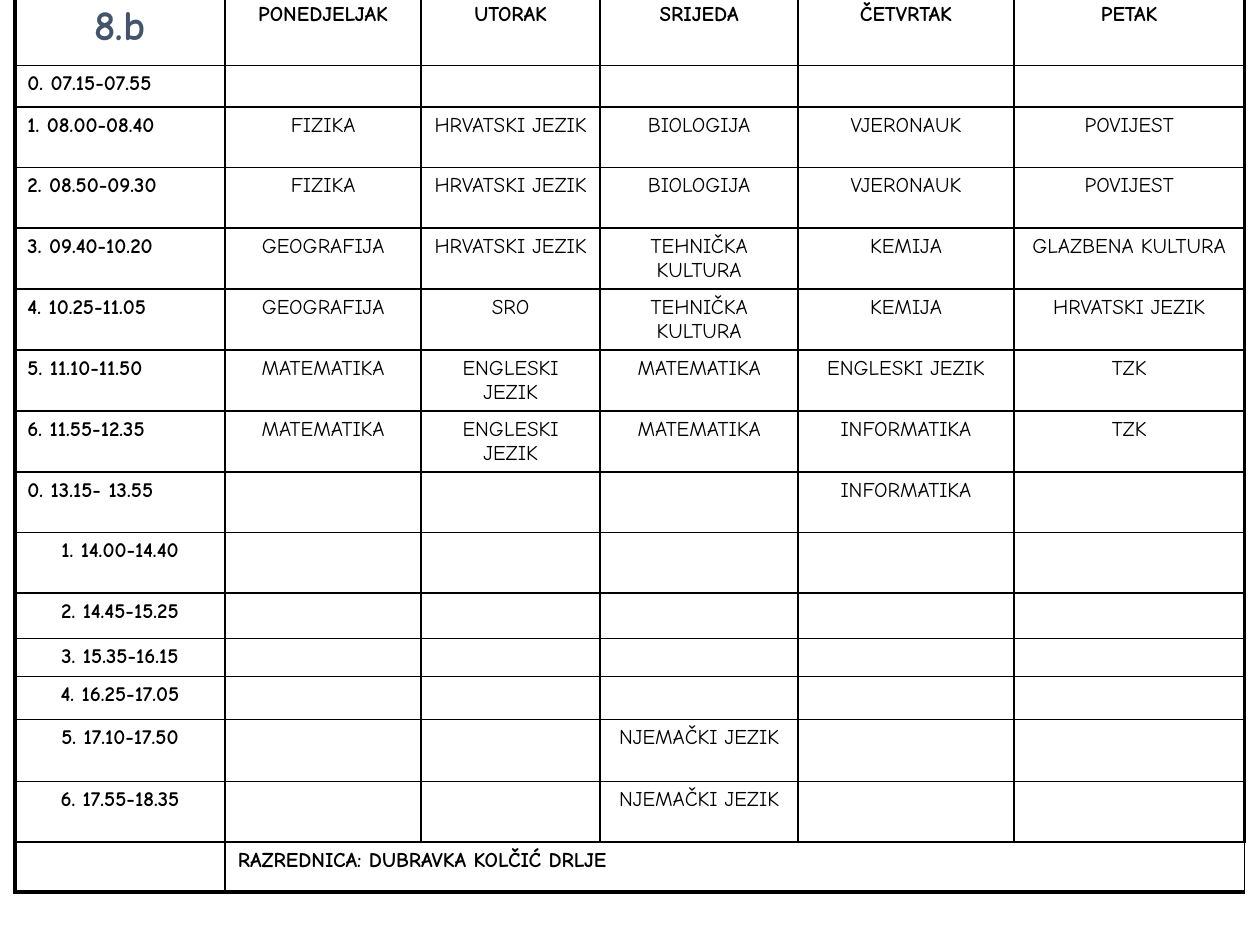
from dataclasses import dataclass

from lxml import etree
from pptx import Presentation
from pptx import util as u
from pptx.dml.color import RGBColor
from pptx.enum import text
from pptx.oxml.ns import qn
from pptx.table import Table, _Cell


@dataclass(frozen=True)
class Theme:
    font: str = "Comic Neue"
    ink: str = "000000"
    accent: str = "44546A"
    body: float = 12
    heading: float = 24
    inner_line: float = 1
    outer_line: float = 2.25


@dataclass(frozen=True)
class Lesson:
    time: str
    height: float  # cm
    subjects: tuple[str, ...] = ("",) * 5
    centred: bool = False


THEME = Theme()
CLASS_NAME = "8.b"
DAYS = ("PONEDJELJAK", "UTORAK", "SRIJEDA", "ČETVRTAK", "PETAK")
TEACHER = "RAZREDNICA: DUBRAVKA KOLČIĆ DRLJE"
COLUMNS = (4.24, 3.95, 3.61, 3.99, 4.35, 4.65)  # cm
HEADER_HEIGHT, FOOTER_HEIGHT = 1.4, 1.01
GERMAN = ("", "", "NJEMAČKI JEZIK", "", "")

LESSONS = (
    Lesson("0. 07.15-07.55", 0.84),
    Lesson("1. 08.00-08.40", 1.22,
           ("FIZIKA", "HRVATSKI JEZIK", "BIOLOGIJA", "VJERONAUK", "POVIJEST")),
    Lesson("2. 08.50-09.30", 1.22,
           ("FIZIKA", "HRVATSKI JEZIK", "BIOLOGIJA", "VJERONAUK", "POVIJEST")),
    Lesson("3. 09.40-10.20", 1.23,
           ("GEOGRAFIJA", "HRVATSKI JEZIK", "TEHNIČKA KULTURA", "KEMIJA", "GLAZBENA KULTURA")),
    Lesson("4. 10.25-11.05", 1.23,
           ("GEOGRAFIJA", "SRO", "TEHNIČKA KULTURA", "KEMIJA", "HRVATSKI JEZIK")),
    Lesson("5. 11.10-11.50", 1.23,
           ("MATEMATIKA", "ENGLESKI JEZIK", "MATEMATIKA", "ENGLESKI JEZIK", "TZK")),
    Lesson("6. 11.55-12.35", 1.23,
           ("MATEMATIKA", "ENGLESKI JEZIK", "MATEMATIKA", "INFORMATIKA", "TZK")),
    Lesson("0. 13.15- 13.55", 1.22, ("", "", "", "INFORMATIKA", "")),
    Lesson("1. 14.00-14.40", 1.22, centred=True),
    Lesson("2. 14.45-15.25", 0.91, centred=True),
    Lesson("3. 15.35-16.15", 0.75, centred=True),
    Lesson("4. 16.25-17.05", 0.86, centred=True),
    Lesson("5. 17.10-17.50", 1.25, GERMAN, centred=True),
    Lesson("6. 17.55-18.35", 1.22, GERMAN, centred=True),
)


def write(cell: _Cell, words: str, bold: bool = False, centred: bool = True,
          size: float = THEME.body, colour: str = THEME.ink) -> None:
    p = cell.text_frame.paragraphs[0]
    p.alignment = text.PP_ALIGN.CENTER if centred else text.PP_ALIGN.LEFT
    if not words:
        # An empty cell takes its line height from the end-of-paragraph mark.
        etree.SubElement(p._p, qn("a:endParaRPr"), sz=str(int(size * 100)))
        return
    r = p.add_run()
    r.text = words
    r.font.name = THEME.font
    r.font.size = u.Pt(size)
    r.font.bold = bold
    r.font.color.rgb = RGBColor.from_string(colour)


def draw_borders(cell: _Cell, outer: dict[str, bool]) -> None:
    """Rule all four sides, heavier on those at the edge of the table."""
    props = cell._tc.get_or_add_tcPr()
    for side in ("L", "R", "T", "B"):
        width = THEME.outer_line if outer[side] else THEME.inner_line
        line = etree.SubElement(props, qn(f"a:ln{side}"), w=str(u.Pt(width)))
        fill = etree.SubElement(line, qn("a:solidFill"))
        etree.SubElement(fill, qn("a:srgbClr"), val=THEME.ink)


def style_grid(table: Table) -> None:
    table.first_row = table.horz_banding = False
    last_row, last_col = len(table.rows) - 1, len(table.columns) - 1
    for i in range(last_row + 1):
        for j in range(last_col + 1):
            cell = table.cell(i, j)
            draw_borders(cell, {"L": j == 0, "R": j == last_col,
                                "T": i == 0, "B": i == last_row})
            cell.fill.background()


def fill_timetable(table: Table) -> None:
    write(table.cell(0, 0), CLASS_NAME, True, size=THEME.heading, colour=THEME.accent)
    for j, day in enumerate(DAYS, 1):
        write(table.cell(0, j), day, True)
    for i, lesson in enumerate(LESSONS, 1):
        write(table.cell(i, 0), lesson.time, True, lesson.centred)
        for j, subject in enumerate(lesson.subjects, 1):
            write(table.cell(i, j), subject)
    footer = len(LESSONS) + 1
    write(table.cell(footer, 0), "")
    table.cell(footer, 1).merge(table.cell(footer, len(DAYS)))
    write(table.cell(footer, 1), TEACHER, True, False)


def main() -> None:
    prs = Presentation()
    prs.slide_width, prs.slide_height = u.Cm(25.4), u.Cm(19.05)
    s = prs.slides.add_slide(prs.slide_layouts[6])
    heights = (HEADER_HEIGHT, *(lesson.height for lesson in LESSONS), FOOTER_HEIGHT)
    table = s.shapes.add_table(len(heights), len(COLUMNS), u.Cm(0.3), u.Cm(-0.08),
                               u.Cm(sum(COLUMNS)), u.Cm(sum(heights))).table
    for column, width in zip(table.columns, COLUMNS):
        column.width = u.Cm(width)
    for row, height in zip(table.rows, heights):
        row.height = u.Cm(height)
    style_grid(table)
    fill_timetable(table)
    prs.save("out.pptx")


if __name__ == "__main__":
    main()
